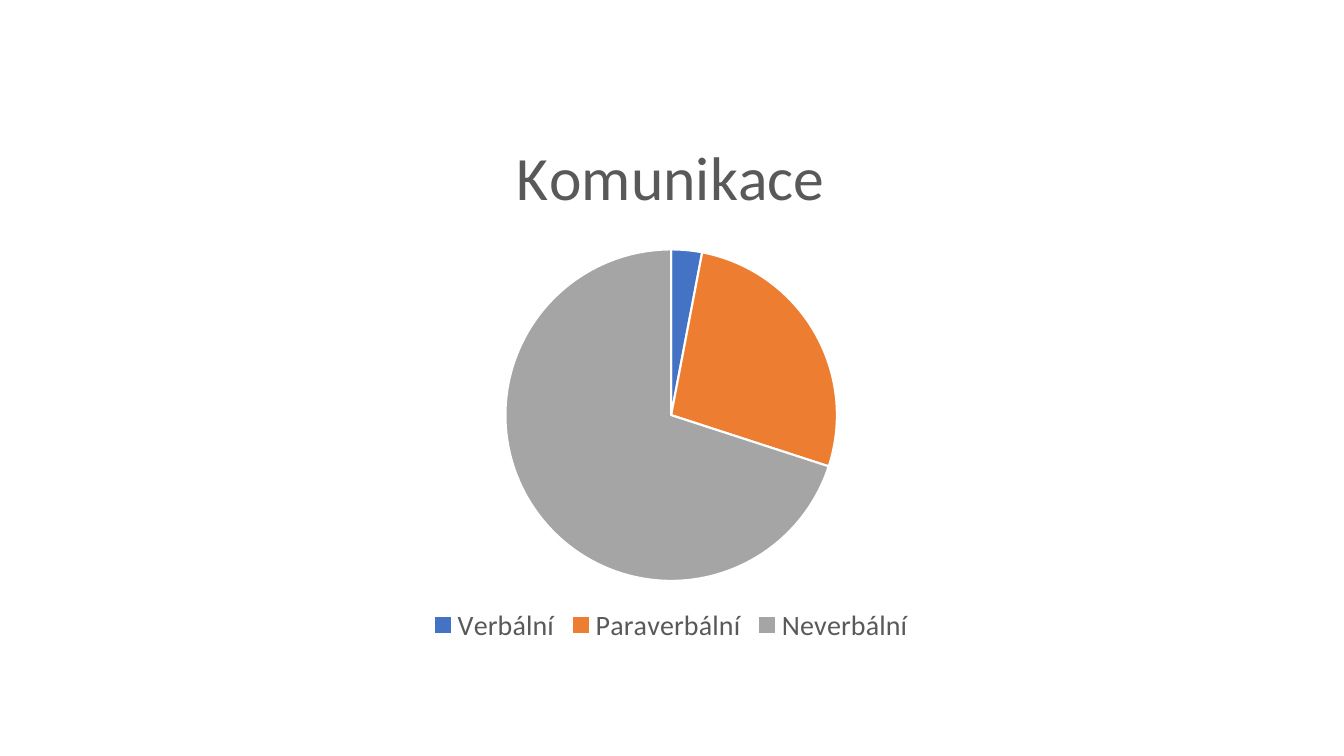
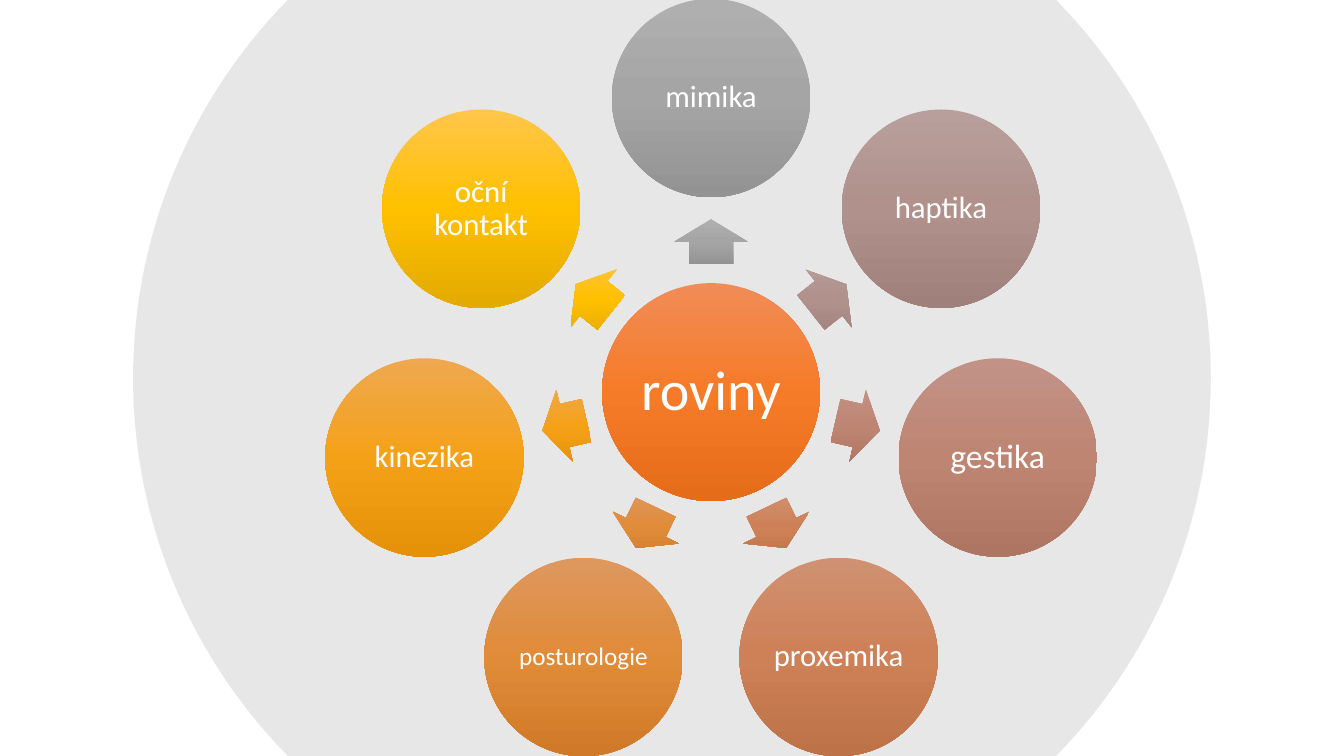
import copy
import math

from pptx import Presentation
from pptx import util as u
from pptx.chart import data as chart_data
from pptx.dml import color as dml
from pptx.enum import chart as charts, shapes, text
from pptx.oxml import ns
from lxml import etree

SLIDE_W, SLIDE_H = 33.87, 19.05


def rgb(value):
    return dml.RGBColor.from_string(value)


def write(frame, content, size, color, font="Calibri", bold=False,
          align=text.PP_ALIGN.CENTER, spacing=None):
    paragraph = frame.paragraphs[0]
    paragraph.alignment = align
    if spacing:
        paragraph.line_spacing = spacing
    run = paragraph.add_run()
    run.text = content
    run.font.name = font
    run.font.size = u.Pt(size)
    run.font.bold = bold
    run.font.color.rgb = rgb(color)


def around(center, radius, degrees):
    angle = math.radians(degrees)
    return center[0] + radius * math.cos(angle), center[1] + radius * math.sin(angle)


class Deck:
    font = "Calibri"
    gray = "595959"
    white = "FFFFFF"

    def __init__(self):
        self.prs = Presentation()
        self.prs.slide_width = u.Cm(SLIDE_W)
        self.prs.slide_height = u.Cm(SLIDE_H)
        self.slide = None

    def new_slide(self):
        self.slide = self.prs.slides.add_slide(self.prs.slide_layouts[6])

    def pie(self, box, title, shares, colors):
        data = chart_data.CategoryChartData()
        data.categories = list(shares)
        data.add_series(title, list(shares.values()))
        pie = self.slide.shapes.add_chart(
            charts.XL_CHART_TYPE.PIE, *map(u.Cm, box), data).chart
        pie.font.name = self.font
        pie.font.size = u.Pt(10)
        pie.has_title = True
        pie.chart_title.include_in_layout = False
        write(pie.chart_title.text_frame, title, 44, self.gray)
        pie.has_legend = True
        pie.legend.position = charts.XL_LEGEND_POSITION.BOTTOM
        pie.legend.include_in_layout = False
        pie.legend.font.name = self.font
        pie.legend.font.size = u.Pt(20)
        pie.legend.font.color.rgb = rgb(self.gray)
        plot = pie.plots[0]
        plot.vary_by_categories = True
        for index, value in enumerate(colors):
            wedge = plot.series[0].points[index].format
            wedge.fill.solid()
            wedge.fill.fore_color.rgb = rgb(value)
            wedge.line.color.rgb = rgb(self.white)
            wedge.line.width = u.Pt(1.5)

    def backdrop(self, center, radius, color, opacity):
        limit = math.degrees(math.asin(SLIDE_H / 2 / radius))
        steps = 60
        sweep = [-limit + 2 * limit * i / steps for i in range(steps + 1)]
        outline = [around(center, radius, a) for a in sweep + [180 + a for a in sweep]]
        points = [(u.Cm(x), u.Cm(y)) for x, y in outline]
        builder = self.slide.shapes.build_freeform(*points[0])
        builder.add_line_segments(points[1:], close=True)
        disc = builder.convert_to_shape()
        disc.shadow.inherit = False
        disc.line.fill.background()
        disc.fill.solid()
        disc.fill.fore_color.rgb = rgb(color)
        tint = disc.fill._xPr.find(ns.qn("a:solidFill"))[0]
        etree.SubElement(tint, ns.qn("a:alpha")).set("val", str(opacity * 1000))

    def shaded(self, kind, center, width, height, shades):
        x, y = center
        shape = self.slide.shapes.add_shape(
            kind, u.Cm(x - width / 2), u.Cm(y - height / 2), u.Cm(width), u.Cm(height))
        shape.shadow.inherit = False
        shape.line.fill.background()
        shape.fill.gradient()
        shape.fill.gradient_angle = 270
        gradient = shape.fill._xPr.find(ns.qn("a:gradFill"))
        gradient.set("rotWithShape", "0")
        stops = gradient.find(ns.qn("a:gsLst"))
        stops.append(copy.deepcopy(stops[0]))
        for stop, place, shade in zip(shape.fill.gradient_stops, (0, 0.5, 1), shades):
            stop.position = place
            stop.color.rgb = rgb(shade)
        return shape

    def bubble(self, center, diameter, shades, label, size, inset=0.08):
        circle = self.shaded(shapes.MSO_SHAPE.OVAL, center, diameter, diameter, shades)
        frame = circle.text_frame
        frame.word_wrap = True
        frame.vertical_anchor = text.MSO_ANCHOR.MIDDLE
        frame.margin_left = frame.margin_right = u.Cm(inset)
        frame.margin_top = frame.margin_bottom = u.Cm(inset)
        write(frame, label, size, self.white, spacing=0.9)

    def arrow(self, center, degrees, shades):
        pointer = self.shaded(shapes.MSO_SHAPE.RIGHT_ARROW, center, 1.14, 1.85, shades)
        pointer.adjustments[0] = 0.6
        pointer.adjustments[1] = 0.5
        pointer.rotation = degrees % 360


def communication(deck):
    deck.new_slide()
    deck.pie((7.34, 2.69, 19.15, 13.64), "Komunikace",
             {"Verbální": 3, "Paraverbální": 27, "Neverbální": 70},
             ("4472C4", "ED7D31", "A5A5A5"))


def levels(deck):
    deck.new_slide()
    deck.backdrop((SLIDE_W / 2, SLIDE_H / 2), 13.58, "D9D9D9", 62)
    hub = (17.92, 9.88)
    deck.bubble(hub, 5.49, ("F18C57", "F67B28", "E56C19"), "roviny", 40, inset=0.16)
    channels = (
        ("mimika", 22, ("AFAFAF", "A5A5A5", "939393")),
        ("haptika", 22, ("B89F9B", "B0918B", "9F807A")),
        ("gestika", 24, ("C29287", "BE8573", "AD7562")),
        ("proxemika", 22, ("CF9172", "CE8056", "BD7247")),
        ("posturologie", 18, ("DE985E", "E08B38", "D07A29")),
        ("kinezika", 22, ("EFA850", "F5A117", "E59209")),
        ("oční kontakt", 22, ("FFC64B", "FFC000", "E3AA00")),
    )
    for index, (label, size, shades) in enumerate(channels):
        degrees = -90 + index * 360 / len(channels)
        deck.arrow(around(hub, 3.79, degrees), degrees, shades)
        deck.bubble(around(hub, 7.41, degrees), 5, shades, label, size)


def main():
    deck = Deck()
    communication(deck)
    levels(deck)
    deck.prs.save("out.pptx")


if __name__ == "__main__":
    main()
